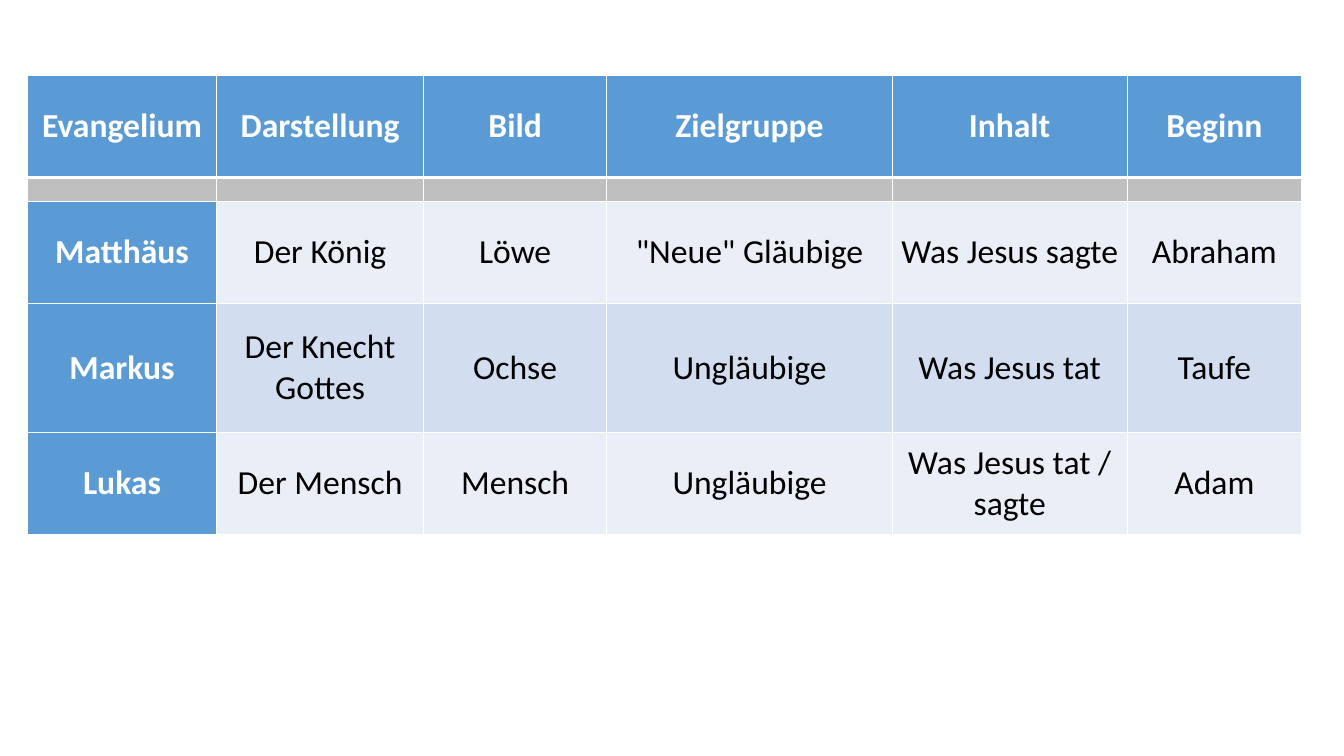
from lxml import etree
from pptx import Presentation
from pptx.dml.color import RGBColor
from pptx.enum import text
from pptx.oxml.ns import qn
from pptx.util import Inches, Pt

BLUE, GRAY, WHITE, BLACK = "5B9BD5", "BFBFBF", "FFFFFF", "000000"
BANDS = ["EAEFF7", "D2DEEF"]
COLUMN_WIDTHS = [1.88, 2.05, 1.82, 2.83, 2.33, 1.73]
ROW_HEIGHTS = [1.01, 0.24, 1.01, 1.28, 1.01]
HEADER_ROW, DIVIDER_ROW = 0, 1
GOSPELS = [
    ["Evangelium", "Darstellung", "Bild", "Zielgruppe", "Inhalt", "Beginn"],
    [""] * len(COLUMN_WIDTHS),
    ["Matthäus", "Der König", "Löwe", '"Neue" Gläubige', "Was Jesus sagte", "Abraham"],
    ["Markus", "Der Knecht Gottes", "Ochse", "Ungläubige", "Was Jesus tat", "Taufe"],
    ["Lukas", "Der Mensch", "Mensch", "Ungläubige", "Was Jesus tat / sagte", "Adam"],
]


def color(value):
    return RGBColor.from_string(value)


def set_borders(cell, top=1, bottom=1):
    """Draw white cell borders; must run before the cell is filled."""
    properties = cell._tc.get_or_add_tcPr()
    widths = {"a:lnL": 1, "a:lnR": 1, "a:lnT": top, "a:lnB": bottom}
    for tag, width in widths.items():
        line = etree.SubElement(properties, qn(tag), w=str(Pt(width)))
        fill = etree.SubElement(line, qn("a:solidFill"))
        etree.SubElement(fill, qn("a:srgbClr"), val=WHITE)


def fill_cell(cell, value):
    cell.fill.solid()
    cell.fill.fore_color.rgb = color(value)


def write_cell(cell, words, heading):
    para = cell.text_frame.paragraphs[0]
    para.alignment = text.PP_ALIGN.CENTER
    span = para.add_run()
    span.text = words
    span.font.name = "Calibri"
    span.font.size = Pt(24)
    span.font.bold = heading
    span.font.color.rgb = color(WHITE if heading else BLACK)


def shrink_empty_cell(cell):
    """Keep the empty line from stretching the narrow row."""
    para = cell.text_frame.paragraphs[0]
    etree.SubElement(para._p, qn("a:endParaRPr"), sz="800")


def format_cell(cell, row, column, words):
    cell.vertical_anchor = text.MSO_ANCHOR.MIDDLE
    cell.margin_left = cell.margin_right = Inches(0.07)
    cell.margin_top = cell.margin_bottom = 0
    set_borders(cell,
                top=3 if row == DIVIDER_ROW else 1,
                bottom=3 if row == HEADER_ROW else 1)
    if row == DIVIDER_ROW:
        fill_cell(cell, GRAY)
        shrink_empty_cell(cell)
        return
    heading = row == HEADER_ROW or column == 0
    fill_cell(cell, BLUE if heading else BANDS[row % 2])
    write_cell(cell, words, heading)


def add_gospel_table(page):
    frame = page.shapes.add_table(
        len(ROW_HEIGHTS), len(COLUMN_WIDTHS), Inches(0.27), Inches(0.75),
        Inches(sum(COLUMN_WIDTHS)), Inches(sum(ROW_HEIGHTS)))
    table = frame.table
    for column, width in zip(table.columns, COLUMN_WIDTHS):
        column.width = Inches(width)
    for row, height in zip(table.rows, ROW_HEIGHTS):
        row.height = Inches(height)
    for row, entries in enumerate(GOSPELS):
        for column, words in enumerate(entries):
            format_cell(table.cell(row, column), row, column, words)


def main():
    deck = Presentation()
    deck.slide_width, deck.slide_height = Inches(13.33), Inches(7.5)
    page = deck.slides.add_slide(deck.slide_layouts[6])
    add_gospel_table(page)
    deck.save("out.pptx")


if __name__ == "__main__":
    main()
